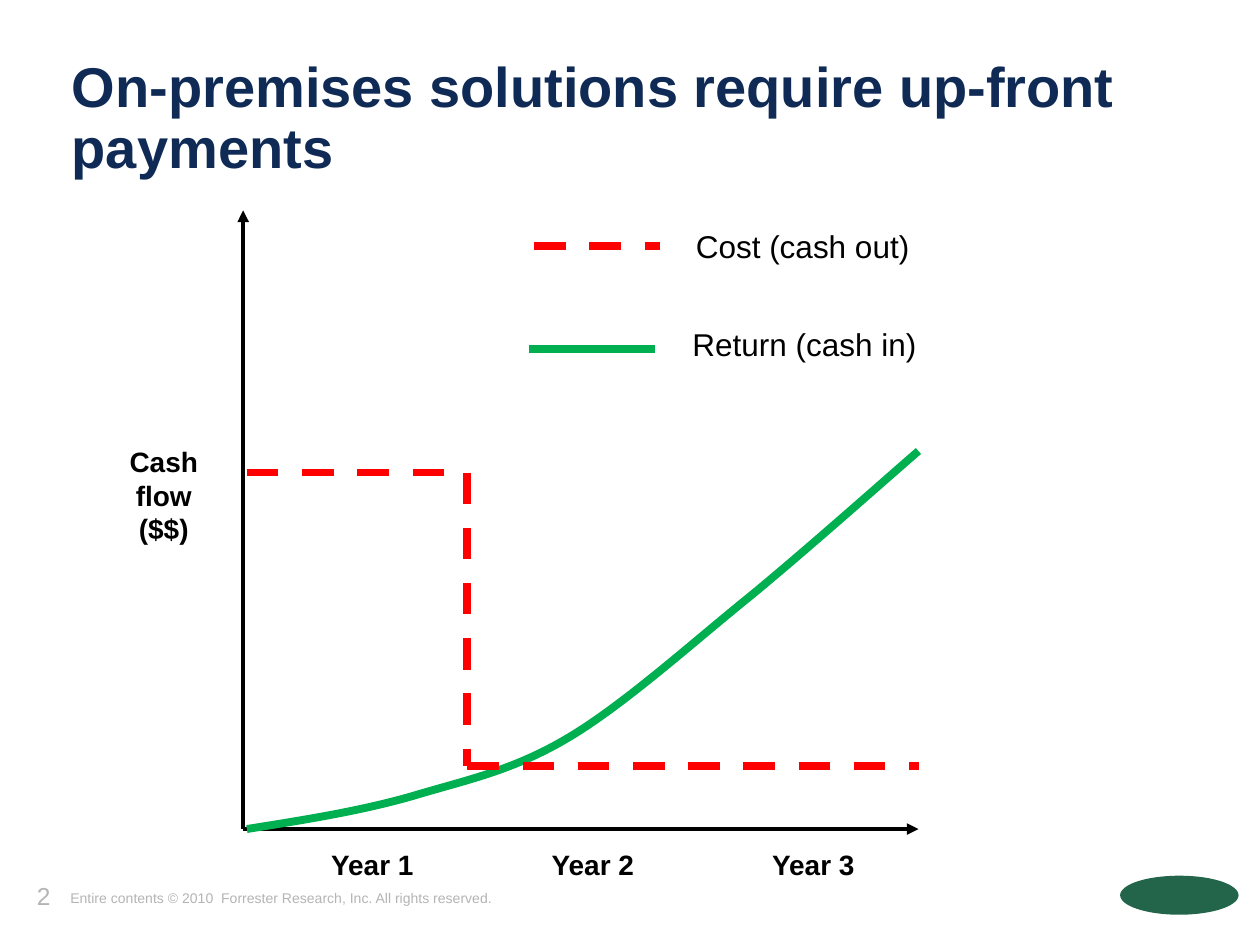
from dataclasses import dataclass

from lxml import etree
from pptx import Presentation
from pptx.dml.color import RGBColor
from pptx.enum.dml import MSO_LINE
from pptx.enum.shapes import MSO_CONNECTOR, MSO_SHAPE
from pptx.enum.text import MSO_ANCHOR, MSO_AUTO_SIZE, PP_ALIGN
from pptx.oxml.ns import qn
from pptx.util import Inches, Pt

LEFT, CENTER, RIGHT = PP_ALIGN.LEFT, PP_ALIGN.CENTER, PP_ALIGN.RIGHT
TOP, MIDDLE = MSO_ANCHOR.TOP, MSO_ANCHOR.MIDDLE
STRAIGHT, DASH = MSO_CONNECTOR.STRAIGHT, MSO_LINE.DASH
NO_AUTOFIT = MSO_AUTO_SIZE.NONE
ELLIPSE = MSO_SHAPE.OVAL
TITLE_ONLY = 5


@dataclass(frozen=True)
class Theme:
    """Colours, type sizes and line widths of the slide."""

    font: str = "Arial"
    navy: str = "0F2A55"
    black: str = "000000"
    gray: str = "B4B4B4"
    cost: str = "FF0000"
    gain: str = "00B050"
    badge: str = "23654B"
    title_size: int = 32
    legend_size: int = 18
    label_size: int = 16
    number_size: int = 14
    footer_size: int = 8
    axis_width: float = 2.25
    series_width: float = 4.5


THEME = Theme()
ORIGIN_Y, AXIS_X, AXIS_TOP = 6.58, 1.93, 1.67
START_X, END_X = 1.96, 7.29
COST_STEPS = [(START_X, 3.75), (3.71, 3.75), (3.71, 6.08), (END_X, 6.08)]
RETURN_CURVE = [
    (START_X, ORIGIN_Y),
    (2.4, 6.51), (2.85, 6.44), (3.27, 6.32),
    (3.7, 6.19), (4.07, 6.12), (4.52, 5.85),
    (4.97, 5.58), (5.51, 5.09), (5.97, 4.72),
    (6.43, 4.34), (7.07, 3.77), (END_X, 3.58),
]


def style_paragraph(para, size, color, bold=False, align=LEFT):
    """Set the font and alignment of one paragraph."""
    para.alignment = align
    para.font.name = THEME.font
    para.font.size = Pt(size)
    para.font.bold = bold
    para.font.color.rgb = RGBColor.from_string(color)


def set_title(slide, text):
    """Place and format the title placeholder."""
    title = slide.shapes.title
    title.left, title.top = Inches(0.47), Inches(0.42)
    title.width, title.height = Inches(9), Inches(0.45)
    frame = title.text_frame
    frame.text = text
    frame.auto_size = NO_AUTOFIT
    frame.vertical_anchor = TOP
    para = frame.paragraphs[0]
    style_paragraph(para, THEME.title_size, THEME.navy, bold=True)
    para.line_spacing = 0.9


def add_text(slide, area, lines, size, color, bold=False, align=CENTER,
             anchor=TOP, inset=True):
    """Add an unwrapped text box with one paragraph for each line."""
    box = slide.shapes.add_textbox(*map(Inches, area))
    frame = box.text_frame
    frame.word_wrap = False
    frame.vertical_anchor = anchor
    if not inset:
        frame.margin_left = frame.margin_right = 0
        frame.margin_top = frame.margin_bottom = 0
    for index, line in enumerate(lines):
        para = frame.add_paragraph() if index else frame.paragraphs[0]
        para.text = line
        style_paragraph(para, size, color, bold, align)


def add_axis_label(slide, area, lines):
    """Add a bold label without insets next to an axis."""
    add_text(slide, area, lines, THEME.label_size, THEME.black, bold=True,
             inset=False)


def add_line(slide, start, end, color, width, dashed=False):
    """Add a straight line and return its connector."""
    line = slide.shapes.add_connector(STRAIGHT, *map(Inches, start + end))
    line.line.color.rgb = RGBColor.from_string(color)
    line.line.width = Pt(width)
    if dashed:
        line.line.dash_style = DASH
    etree.SubElement(line._element.spPr, qn("a:effectLst"))
    return line


def add_axis(slide, end):
    """Add an axis from the origin that ends in an arrowhead."""
    axis = add_line(slide, (AXIS_X, ORIGIN_Y), end, THEME.black,
                    THEME.axis_width)
    etree.SubElement(axis.line._get_or_add_ln(), qn("a:tailEnd"),
                     type="triangle")


def add_curve(slide, points, color):
    """Add an open Bezier curve through a start and triples of points."""
    start, *controls = [tuple(map(Inches, point)) for point in points]
    builder = slide.shapes.build_freeform(*start)
    builder.add_line_segments(controls, close=False)
    curve = builder.convert_to_shape()
    outline = next(curve._element.iter(qn("a:path")))
    segments = outline.findall(qn("a:lnTo"))
    for first in range(0, len(segments), 3):
        bezier = etree.SubElement(outline, qn("a:cubicBezTo"))
        for segment in segments[first:first + 3]:
            bezier.append(segment[0])
            outline.remove(segment)
    curve.shadow.inherit = False
    curve.fill.background()
    curve.line.color.rgb = RGBColor.from_string(color)
    curve.line.width = Pt(THEME.series_width)


def add_legend_entry(slide, line_start, text_area, text, color, dashed=False):
    """Add a one-inch line sample and its description."""
    left, top = line_start
    add_line(slide, line_start, (left + 1, top), color, THEME.series_width,
             dashed)
    add_text(slide, text_area, [text], THEME.legend_size, THEME.black)


def add_footer(slide):
    """Add the page number, the copyright line and a plain badge."""
    add_text(slide, (0.06, 6.94, 0.44, 0.33), ["2"], THEME.number_size,
             THEME.gray, align=RIGHT)
    notice = ("Entire contents © 2010  Forrester Research, Inc. "
              "All rights reserved.")
    add_text(slide, (0.46, 7.01, 3.59, 0.23), [notice], THEME.footer_size,
             THEME.gray, align=LEFT, anchor=MIDDLE)
    badge = slide.shapes.add_shape(
        ELLIPSE, *map(Inches, (8.89, 6.95, 0.94, 0.31)))
    badge.shadow.inherit = False
    badge.fill.solid()
    badge.fill.fore_color.rgb = RGBColor.from_string(THEME.badge)
    badge.line.fill.background()


def main():
    """Build the cash flow slide and save it."""
    deck = Presentation()
    deck.slide_width, deck.slide_height = Inches(10), Inches(7.5)
    slide = deck.slides.add_slide(deck.slide_layouts[TITLE_ONLY])
    add_footer(slide)
    set_title(slide, "On-premises solutions require up-front payments")

    add_axis(slide, (AXIS_X, AXIS_TOP))
    add_axis(slide, (END_X, ORIGIN_Y))
    add_axis_label(slide, (1, 3.53, 0.6, 0.8), ["Cash ", "flow", "($$)"])
    for year in range(3):
        add_axis_label(slide, (2.62 + 1.75 * year, 6.73, 0.67, 0.27),
                       [f"Year {year + 1}"])

    add_curve(slide, RETURN_CURVE, THEME.gain)
    for start, end in zip(COST_STEPS, COST_STEPS[1:]):
        add_line(slide, start, end, THEME.cost, THEME.series_width,
                 dashed=True)

    add_legend_entry(slide, (4.24, 1.95), (5.37, 1.75, 2, 0.4),
                     "Cost (cash out)", THEME.cost, dashed=True)
    add_legend_entry(slide, (4.2, 2.77), (5.35, 2.53, 2.07, 0.4),
                     "Return (cash in)", THEME.gain)
    deck.save("out.pptx")


if __name__ == "__main__":
    main()
